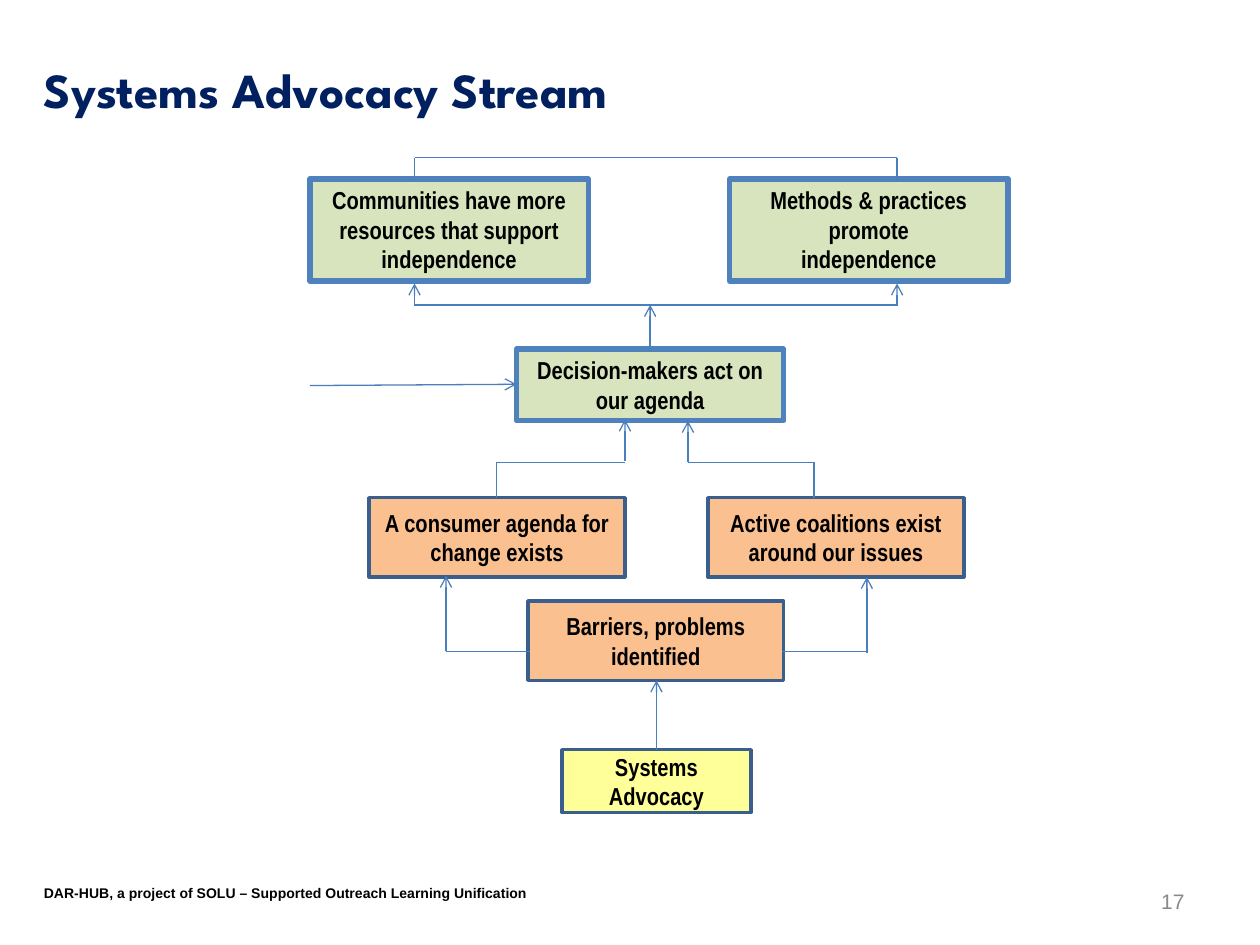
from lxml import etree
from pptx import Presentation
from pptx.dml.color import RGBColor
from pptx.enum.shapes import MSO_CONNECTOR, MSO_SHAPE
from pptx.enum.text import MSO_ANCHOR, PP_ALIGN
from pptx.oxml.ns import qn
from pptx.util import Inches, Pt

RECT = MSO_SHAPE.RECTANGLE
STRAIGHT = MSO_CONNECTOR.STRAIGHT
TOP, MIDDLE = MSO_ANCHOR.TOP, MSO_ANCHOR.MIDDLE
LEFT, CENTER, RIGHT = PP_ALIGN.LEFT, PP_ALIGN.CENTER, PP_ALIGN.RIGHT

COLORS = {
    "navy": "002060", "black": "000000", "gray": "898989",
    "yellow": "FFFF99", "green": "D7E4BD", "orange": "FAC090",
    "blue": "4F81BD", "dark": "3A5F8C", "wire": "4B7EBC",
}

# Each level: fill, border, border width, anchor
STYLES = {
    "base": ("yellow", "dark", 2, MIDDLE),
    "step": ("orange", "dark", 2, MIDDLE),
    "goal": ("green", "blue", 3, TOP),
}

# Level, left, top, width, height, text
BOXES = [
    ("base", 4.46, 5.95, 1.5, 0.5, "Systems Advocacy"),
    ("goal", 2.46, 1.42, 2.21, 0.81,
     "Communities have more resources that support independence"),
    ("goal", 5.79, 1.42, 2.21, 0.81,
     "Methods & practices promote\nindependence"),
    ("goal", 4.1, 2.77, 2.12, 0.57, "Decision-makers act on our agenda"),
    ("step", 2.93, 3.95, 2.03, 0.63, "A consumer agenda for change exists"),
    ("step", 5.62, 3.95, 2.03, 0.63,
     "Active coalitions exist around our issues"),
    ("step", 4.19, 4.77, 2.03, 0.63, "Barriers, problems identified"),
]

# Start x, start y, end x, end y
LINES = [
    # Bracket over the two outcomes
    (3.29, 1.25, 7.12, 1.25),
    (3.29, 1.25, 3.29, 1.44),
    (7.12, 1.25, 7.12, 1.44),
    # Bar under the two outcomes
    (3.29, 2.42, 7.12, 2.42),
    # From the agenda and the coalitions to the decision
    (3.94, 3.95, 3.94, 3.67),
    (6.46, 3.95, 6.46, 3.67),
    (3.94, 3.67, 4.96, 3.67),
    (5.46, 3.67, 6.47, 3.67),
    # Out of the sides of the barriers box
    (3.54, 5.17, 4.21, 5.17),
    (6.21, 5.17, 6.88, 5.17),
]
ARROWS = [
    (3.29, 2.43, 3.29, 2.25),
    (7.12, 2.43, 7.12, 2.25),
    (5.16, 2.77, 5.16, 2.42),
    (2.46, 3.06, 4.1, 3.05),
    (4.96, 3.66, 4.96, 3.33),
    (5.46, 3.67, 5.46, 3.34),
    (3.54, 5.17, 3.54, 4.57),
    (6.88, 5.18, 6.88, 4.58),
    (5.21, 5.95, 5.21, 5.4),
]


def color(name):
    return RGBColor.from_string(COLORS[name])


def set_text(shape, text, font, size, tint, bold, align, anchor):
    frame = shape.text_frame
    frame.word_wrap = True
    frame.vertical_anchor = anchor
    frame.text = text
    for para in frame.paragraphs:
        para.alignment = align
        for run in para.runs:
            run.font.name = font
            run.font.size = Pt(size)
            run.font.bold = bold
            run.font.color.rgb = color(tint)


def add_label(slide, place, text, font, size, tint, bold, align, anchor):
    label = slide.shapes.add_textbox(*map(Inches, place))
    set_text(label, text, font, size, tint, bold, align, anchor)


def add_box(slide, level, left, top, width, height, text):
    fill, border, weight, anchor = STYLES[level]
    place = map(Inches, (left, top, width, height))
    box = slide.shapes.add_shape(RECT, *place)
    box.shadow.inherit = False
    box.fill.solid()
    box.fill.fore_color.rgb = color(fill)
    box.line.color.rgb = color(border)
    box.line.width = Pt(weight)
    set_text(box, text, "Arial Narrow", 14, "black", True, CENTER, anchor)


def add_line(slide, ends, arrow=False):
    line = slide.shapes.add_connector(STRAIGHT, *map(Inches, ends))
    line.line.color.rgb = color("wire")
    line.line.width = Pt(0.75)
    if arrow:
        tip = etree.SubElement(line.line._get_or_add_ln(), qn("a:tailEnd"))
        tip.set("type", "arrow")
    etree.SubElement(line._element.spPr, qn("a:effectLst"))


def main():
    deck = Presentation()
    deck.slide_width, deck.slide_height = Inches(10), Inches(7.5)
    slide = deck.slides.add_slide(deck.slide_layouts[6])

    # Footer and title
    add_label(slide, (0.25, 6.97, 5, 0.23),
              "DAR-HUB, a project of SOLU – Supported Outreach "
              "Learning Unification",
              "Arial", 8, "black", True, LEFT, TOP)
    add_label(slide, (0.25, 0.08, 9, 1.25), "Systems Advocacy Stream",
              "League Spartan", 28, "navy", True, LEFT, MIDDLE)

    # Flow chart
    for box in BOXES:
        add_box(slide, *box)
    for ends in LINES:
        add_line(slide, ends)
    for ends in ARROWS:
        add_line(slide, ends, arrow=True)

    # Page number
    add_label(slide, (7.17, 6.95, 2.33, 0.4), "17",
              "Arial", 12, "gray", False, RIGHT, MIDDLE)

    deck.save("out.pptx")


if __name__ == "__main__":
    main()
